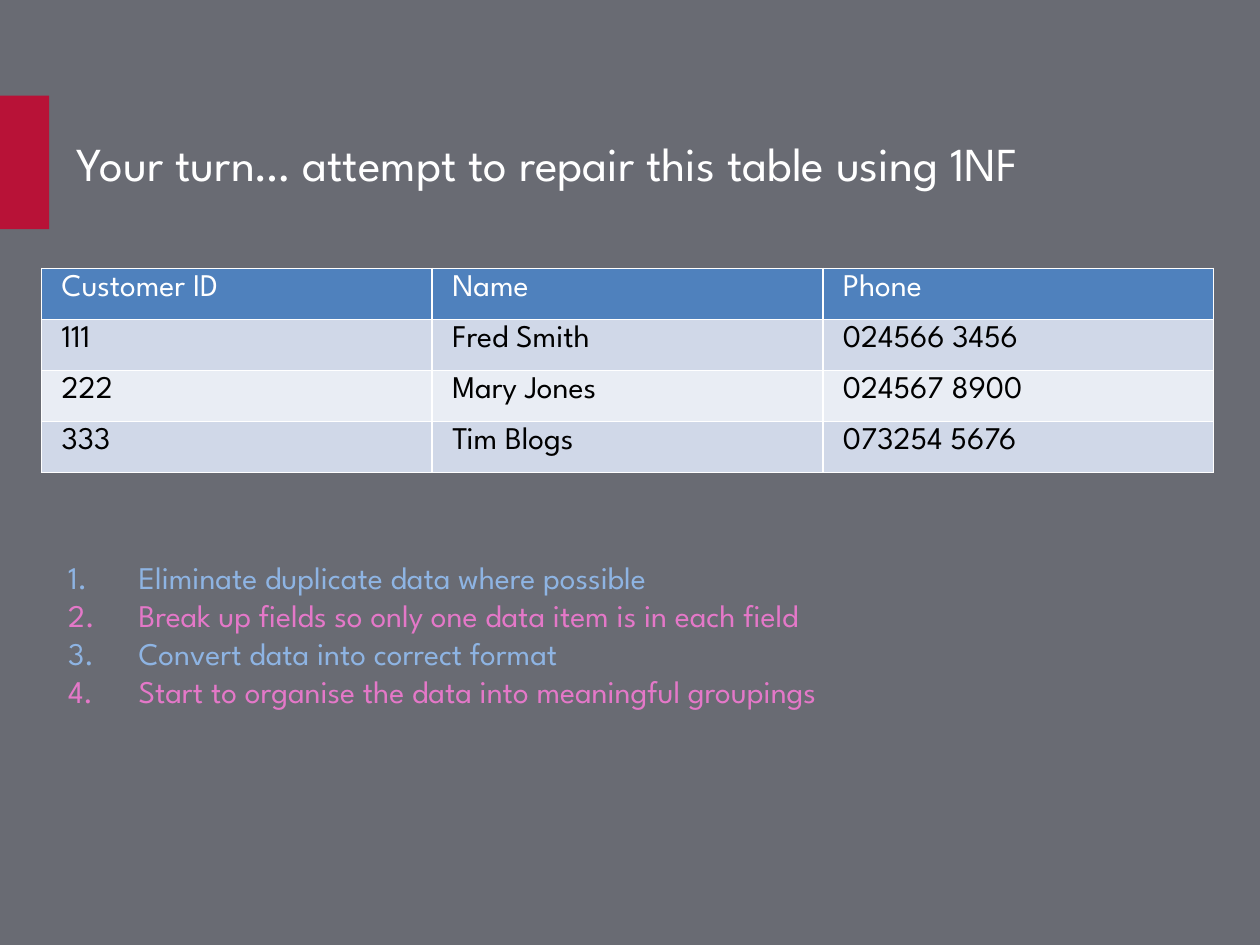
from lxml.etree import SubElement
from pptx import Presentation
from pptx.dml.color import RGBColor
from pptx.enum.shapes import MSO_SHAPE
from pptx.enum.text import MSO_ANCHOR, MSO_AUTO_SIZE, PP_ALIGN
from pptx.oxml.ns import qn
from pptx.util import Inches, Pt

FONT = "League Spartan"
COLORS = {
    "background": "696B73",
    "accent": "B81237",
    "white": "FFFFFF",
    "black": "000000",
    "header": "4F81BD",
    "odd_row": "D0D8E8",
    "even_row": "E9EDF4",
    "blue": "8EB4E3",
    "pink": "E478C8",
}
CUSTOMERS = [
    ("Customer ID", "Name", "Phone"),
    ("111", "Fred Smith", "024566 3456"),
    ("222", "Mary Jones", "024567 8900"),
    ("333", "Tim Blogs", "073254 5676"),
]
STEPS = [
    "Eliminate duplicate data where possible",
    "Break up fields so only one data item is in each field",
    "Convert data into correct format",
    "Start to organise the data into meaningful groupings",
]


def fill_solid(fill, color):
    """Give a fill one of the named colours."""
    fill.solid()
    fill.fore_color.rgb = RGBColor.from_string(COLORS[color])


def style_font(font, size, color):
    """Set the slide's typeface with a size and a named colour."""
    font.name = FONT
    font.size = Pt(size)
    font.bold = False
    font.color.rgb = RGBColor.from_string(COLORS[color])


def place(shape, left, top, width, height):
    """Move a shape to a box given in inches."""
    shape.left, shape.top = Inches(left), Inches(top)
    shape.width, shape.height = Inches(width), Inches(height)


def add_heading(slide, left, top, width, height):
    """Place the accent bar and the title beside it."""
    bar = slide.shapes.add_shape(
        MSO_SHAPE.RECTANGLE, Inches(left), Inches(top), Inches(0.39), Inches(height)
    )
    bar.shadow.inherit = False
    fill_solid(bar.fill, "accent")
    bar.line.fill.background()

    title = slide.shapes.title
    place(title, left + 0.51, top, width - 0.51, height)
    frame = title.text_frame
    frame.text = "Your turn… attempt to repair this table using 1NF"
    frame.auto_size = MSO_AUTO_SIZE.NONE
    frame.vertical_anchor = MSO_ANCHOR.MIDDLE
    paragraph = frame.paragraphs[0]
    paragraph.alignment = PP_ALIGN.LEFT
    style_font(paragraph.font, 27, "white")


def add_customer_table(slide, left, top, width, height):
    """Add the customer table with a header and banded rows."""
    table = slide.shapes.add_table(
        len(CUSTOMERS), len(CUSTOMERS[0]),
        Inches(left), Inches(top), Inches(width), Inches(height),
    ).table
    for row, values in enumerate(CUSTOMERS):
        band = "header" if row == 0 else "odd_row" if row % 2 else "even_row"
        for column, value in enumerate(values):
            cell = table.cell(row, column)
            cell.text = value
            cell.margin_left = cell.margin_right = Inches(0.16)
            fill_solid(cell.fill, band)
            color = "black" if row else "white"
            style_font(cell.text_frame.paragraphs[0].font, 18, color)


def add_steps(slide, left, top, width, height):
    """Fill the body placeholder with numbered steps in alternating colours."""
    body = slide.placeholders[1]
    place(body, left, top, width, height)
    frame = body.text_frame
    frame.text = "\n".join(STEPS)
    frame.auto_size = MSO_AUTO_SIZE.NONE
    for index, paragraph in enumerate(frame.paragraphs):
        paragraph.space_before = Pt(0)
        properties = paragraph._p.get_or_add_pPr()
        properties.set("marL", str(Inches(1)))
        properties.set("indent", str(Inches(-0.56)))
        SubElement(properties, qn("a:buAutoNum"), type="arabicPeriod")
        style_font(paragraph.font, 18, "pink" if index % 2 else "blue")


def build_slide(presentation):
    """Build the 1NF exercise slide."""
    slide = presentation.slides.add_slide(presentation.slide_layouts[1])
    fill_solid(slide.background.fill, "background")
    add_heading(slide, 0, 0.76, 9.51, 1.06)
    add_customer_table(slide, 0.33, 2.13, 9.3, 1.62)
    add_steps(slide, 0, 4.38, 8.07, 1.31)


def main():
    """Create the presentation and save it."""
    presentation = Presentation()
    presentation.slide_width = Inches(10)
    presentation.slide_height = Inches(7.5)
    build_slide(presentation)
    presentation.save("out.pptx")


if __name__ == "__main__":
    main()
